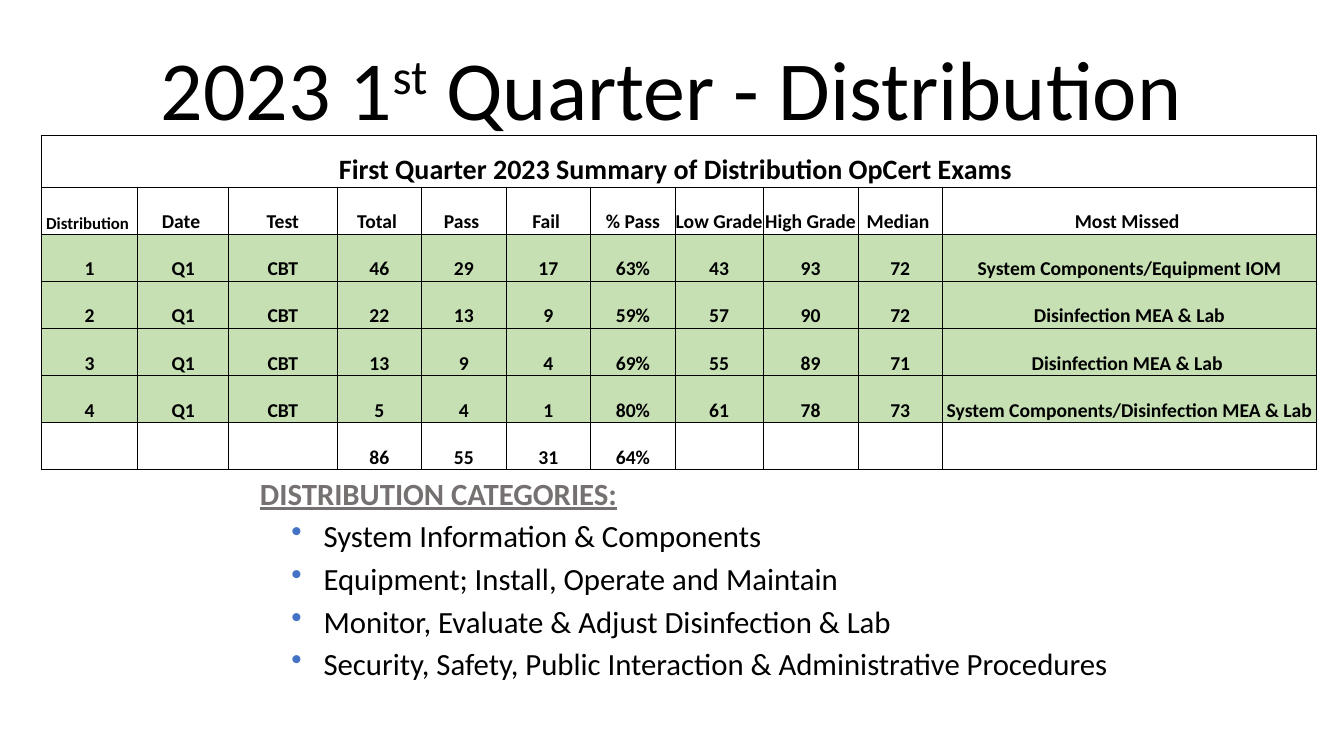
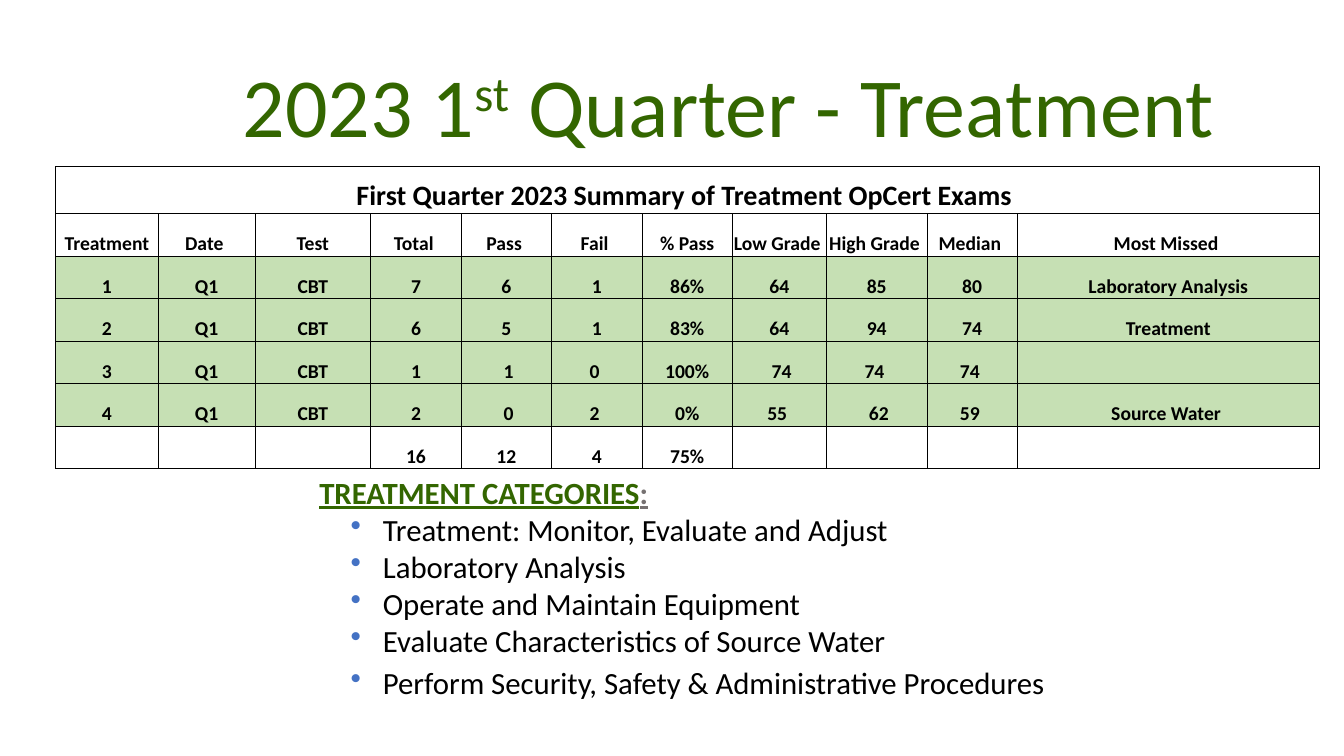
"""Build the quarterly exam summary slides."""
from dataclasses import dataclass

from lxml.etree import SubElement
from pptx import Presentation as new_presentation
from pptx.dml.color import RGBColor
from pptx.enum.text import MSO_ANCHOR as Anchor, MSO_AUTO_SIZE as AutoSize, PP_ALIGN as Align
from pptx.oxml.ns import qn
from pptx.slide import Slide
from pptx.table import _Cell as Cell
from pptx.text.text import _Paragraph as Paragraph, _Run as Run
from pptx.util import Pt

FONT = "Calibri"
BLACK, GRAY, GREEN, BLUE, PALE_GREEN = "000000", "767171", "336600", "4472C4", "C6E0B4"
HEADINGS = ("Date ", "Test", "Total ", "Pass ", "Fail ", "% Pass",
            "Low Grade ", "High Grade ", "Median ", "Most Missed ")
TITLE_ONLY = 5


@dataclass(frozen=True)
class Box:
    """Position and size in points."""
    left: float
    top: float
    width: float
    height: float

    def lengths(self) -> tuple[Pt, ...]:
        """Return left, top, width and height as lengths."""
        return Pt(self.left), Pt(self.top), Pt(self.width), Pt(self.height)


@dataclass(frozen=True)
class Category:
    """A bulleted exam category."""
    text: str
    space_before: float = 4


@dataclass(frozen=True)
class ExamSummary:
    """Content and layout of one exam slide."""
    subject: str
    title_box: Box
    title_color: str
    heading_runs: tuple[tuple[str, str], ...]
    categories_box: Box
    categories: tuple[Category, ...]
    table_box: Box
    column_widths: tuple[float, ...]
    caption_height: float
    first_heading: str
    first_heading_size: float
    results: tuple[tuple[str, ...], ...]
    totals: tuple[str, ...]


SUMMARIES = (
    ExamSummary(
        subject="Distribution",
        title_box=Box(29.5, 24.5, 900, 77.8),
        title_color=BLACK,
        heading_runs=(("DISTRIBUTION CATEGORIES:", GRAY),),
        categories_box=Box(178.6, 335.5, 704.9, 167.8),
        categories=(
            Category("System Information & Components"),
            Category("Equipment; Install, Operate and Maintain"),
            Category("Monitor, Evaluate & Adjust Disinfection & Lab"),
            Category("Security, Safety, Public Interaction & Administrative Procedures"),
        ),
        table_box=Box(29.5, 96.5, 910.8, 239),
        column_widths=(68.9, 65, 77.4, *[60.4] * 4, 62.8, 67.8, 60.4, 267.1),
        caption_height=37,
        first_heading="Distribution ",
        first_heading_size=12,
        results=(
            ("1", "Q1", "CBT", "46", "29", "17", "63%", "43", "93", "72",
             "System Components/Equipment IOM"),
            ("2", "Q1", "CBT", "22", "13", "9", "59%", "57", "90", "72",
             "Disinfection MEA & Lab"),
            ("3", "Q1", "CBT", "13", "9", "4", "69%", "55", "89", "71",
             "Disinfection MEA & Lab "),
            ("4", "Q1", "CBT", "5", "4", "1", "80%", "61", "78", "73",
             "System Components/Disinfection MEA & Lab"),
        ),
        totals=("86", "55", "31", "64%"),
    ),
    ExamSummary(
        subject="Treatment",
        title_box=Box(97.9, 35.3, 844.6, 79.2),
        title_color=GREEN,
        heading_runs=(("TREATMENT CATEGORIES", GREEN), (":", GRAY)),
        categories_box=Box(221, 334.8, 567.4, 198),
        categories=(
            Category("Treatment: Monitor, Evaluate and Adjust", 0),
            Category("Laboratory Analysis", 0),
            Category("Operate and Maintain Equipment", 0),
            Category("Evaluate Characteristics of Source Water", 0),
            Category("Perform Security, Safety & Administrative Procedures"),
        ),
        table_box=Box(39.8, 118.8, 902.2, 216),
        column_widths=(73.2, 69.1, 82.8, *[64.6] * 4, 67.2, 71.8, 64.6, 215.7),
        caption_height=33.6,
        first_heading="Treatment",
        first_heading_size=14,
        results=(
            ("1", "Q1", "CBT", "7", "6", "1", "86%", "64", "85", "80", "Laboratory Analysis"),
            ("2", "Q1", "CBT", "6", "5", "1", "83%", "64", "94", "74", "Treatment"),
            ("3", "Q1", "CBT", "1", " 1", "0 ", "100%", " 74", "74 ", "74 ", ""),
            ("4", "Q1", "CBT", "2", " 0", "2 ", "0%", "55 ", " 62", "59 ", "Source Water "),
        ),
        totals=("16", "12", "4", "75%"),
    ),
)


def rgb(color: str) -> RGBColor:
    """Convert a hex string to a colour."""
    return RGBColor.from_string(color)


def add_run(paragraph: Paragraph, text: str, size: float, color: str = BLACK,
            bold: bool = False, underline: bool = False) -> Run:
    """Append a formatted run."""
    run = paragraph.add_run()
    run.text = text
    font = run.font
    font.name, font.size, font.bold, font.underline = FONT, Pt(size), bold, underline
    font.color.rgb = rgb(color)
    return run


def add_bullet(paragraph: Paragraph) -> None:
    """Give a paragraph a hanging blue bullet."""
    properties = paragraph._p.get_or_add_pPr()
    properties.set("marL", str(Pt(45.4)))
    properties.set("indent", str(Pt(-23)))
    bullet_color = SubElement(properties, qn("a:buClr"))
    SubElement(bullet_color, qn("a:srgbClr"), val=BLUE)
    SubElement(properties, qn("a:buChar"), char="•")


def add_borders(cell: Cell) -> None:
    """Draw thin black lines on all four sides of a cell."""
    properties = cell._tc.get_or_add_tcPr()
    for side in ("L", "R", "T", "B"):
        line = SubElement(properties, qn(f"a:ln{side}"), w=str(Pt(0.5)))
        fill = SubElement(line, qn("a:solidFill"))
        SubElement(fill, qn("a:srgbClr"), val=BLACK)


def format_cell(cell: Cell, fill: str | None) -> None:
    """Set the borders, fill, margins and anchor of a cell."""
    add_borders(cell)
    if fill:
        cell.fill.solid()
        cell.fill.fore_color.rgb = rgb(fill)
    else:
        cell.fill.background()
    cell.margin_left = cell.margin_right = cell.margin_top = cell.margin_bottom = 0
    cell.vertical_anchor = Anchor.BOTTOM


def write_cell(cell: Cell, text: str, size: float) -> None:
    """Write centred bold text in a cell."""
    paragraph = cell.text_frame.paragraphs[0]
    paragraph.alignment = Align.CENTER
    add_run(paragraph, text, size, bold=True)


def add_title(slide: Slide, summary: ExamSummary) -> None:
    """Place and write the slide title."""
    title = slide.shapes.title
    title.left, title.top, title.width, title.height = summary.title_box.lengths()
    frame = title.text_frame
    frame.word_wrap = True
    frame.auto_size = AutoSize.NONE
    frame.vertical_anchor = Anchor.BOTTOM
    paragraph = frame.paragraphs[0]
    paragraph.alignment = Align.CENTER
    paragraph.line_spacing = 0.9
    add_run(paragraph, "2023 1", 60, summary.title_color)
    ordinal = add_run(paragraph, "st", 60, summary.title_color)
    ordinal._r.get_or_add_rPr().set("baseline", "30000")
    add_run(paragraph, f" Quarter - {summary.subject}", 60, summary.title_color)


def add_categories(slide: Slide, summary: ExamSummary) -> None:
    """Add the heading and bulleted list of categories."""
    frame = slide.shapes.add_textbox(*summary.categories_box.lengths()).text_frame
    frame.word_wrap = True
    heading = frame.paragraphs[0]
    heading.space_before = Pt(4)
    for text, color in summary.heading_runs:
        add_run(heading, text, 22, color, bold=True, underline=True)
    for category in summary.categories:
        paragraph = frame.add_paragraph()
        paragraph.space_before = Pt(category.space_before)
        add_bullet(paragraph)
        add_run(paragraph, category.text, 22)


def add_results(slide: Slide, summary: ExamSummary) -> None:
    """Add the table of exam results."""
    caption = f"First Quarter 2023 Summary of {summary.subject} OpCert Exams "
    rows = ((caption,), (summary.first_heading, *HEADINGS), *summary.results,
            ("", "", "", *summary.totals))
    column_count = len(summary.column_widths)
    table = slide.shapes.add_table(len(rows), column_count, *summary.table_box.lengths()).table
    table.first_row = table.horz_banding = False
    for column, width in zip(table.columns, summary.column_widths):
        column.width = Pt(width)
    row_height = (summary.table_box.height - summary.caption_height) / (len(rows) - 1)
    for row_index, texts in enumerate(rows):
        table.rows[row_index].height = Pt(row_height if row_index else summary.caption_height)
        fill = PALE_GREEN if 2 <= row_index < len(rows) - 1 else None
        for column_index in range(column_count):
            format_cell(table.cell(row_index, column_index), fill)
        for column_index, text in enumerate(texts):
            size = 14 if row_index else 20
            if (row_index, column_index) == (1, 0):
                size = summary.first_heading_size
            if text:
                write_cell(table.cell(row_index, column_index), text, size)
    table.cell(0, 0).merge(table.cell(0, column_count - 1))


def main() -> None:
    """Build and save the presentation."""
    presentation = new_presentation()
    presentation.slide_width, presentation.slide_height = Pt(960), Pt(540)
    for summary in SUMMARIES:
        slide = presentation.slides.add_slide(presentation.slide_layouts[TITLE_ONLY])
        add_title(slide, summary)
        add_categories(slide, summary)
        add_results(slide, summary)
    presentation.save("out.pptx")


if __name__ == "__main__":
    main()
